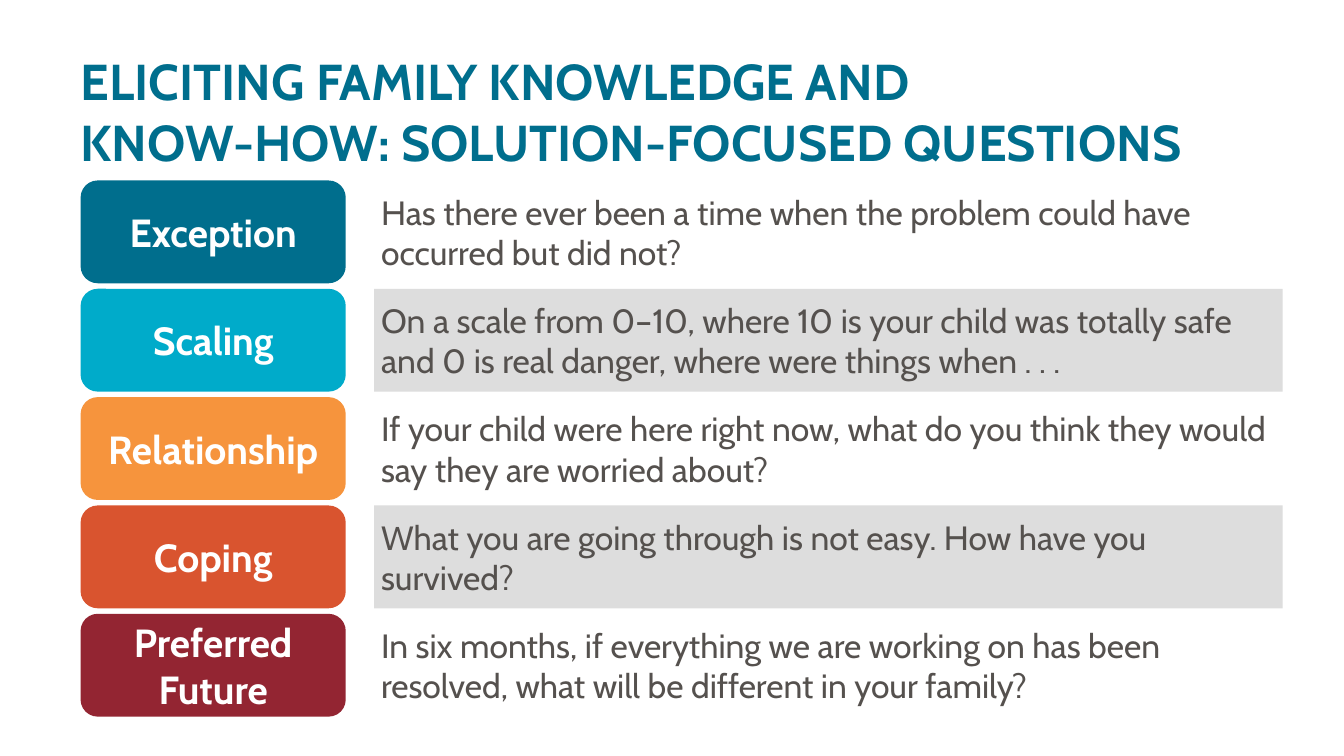
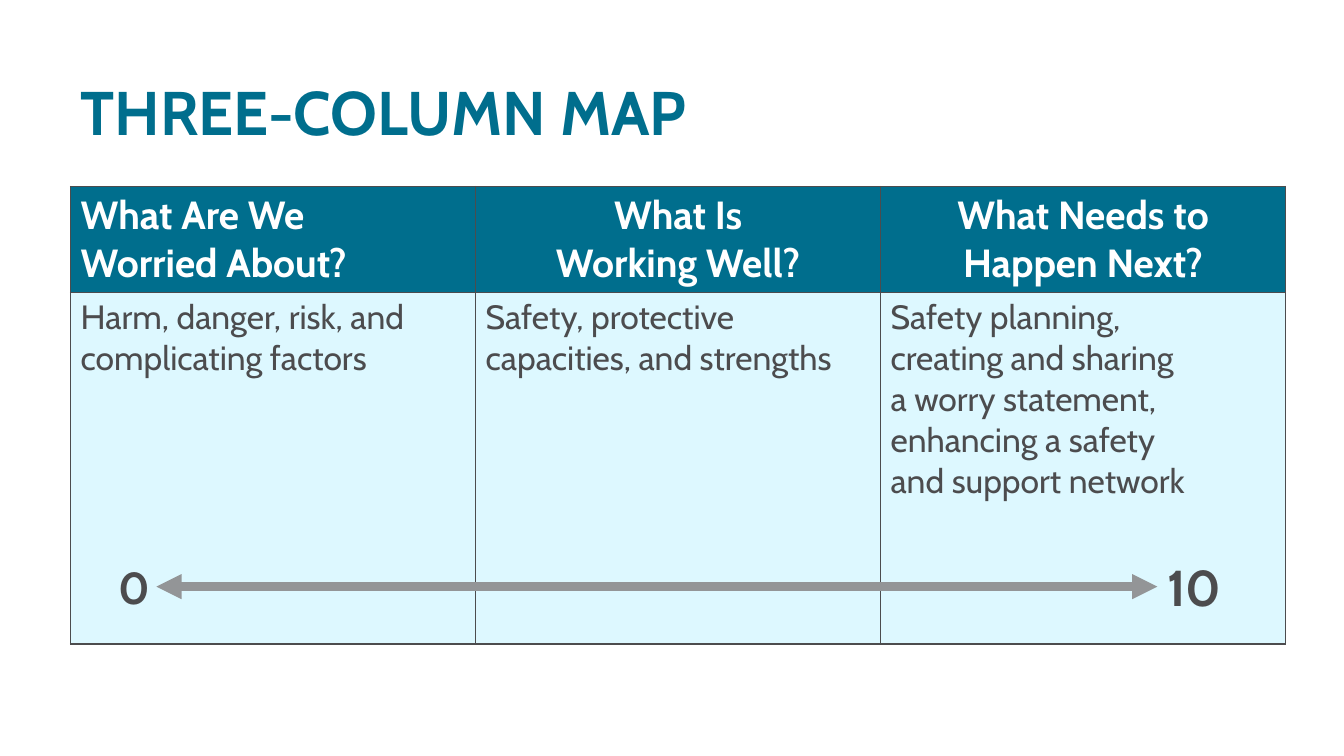
from dataclasses import dataclass

from lxml import etree
from pptx import Presentation
from pptx.dml.color import RGBColor
from pptx.enum.shapes import MSO_CONNECTOR, MSO_SHAPE
from pptx.enum.text import MSO_ANCHOR, PP_ALIGN
from pptx.oxml.ns import qn
from pptx.util import Inches, Pt

LEFT, CENTER = PP_ALIGN.LEFT, PP_ALIGN.CENTER
TOP, MIDDLE = MSO_ANCHOR.TOP, MSO_ANCHOR.MIDDLE
RECT, ROUND = MSO_SHAPE.RECTANGLE, MSO_SHAPE.ROUNDED_RECTANGLE
STRAIGHT = MSO_CONNECTOR.STRAIGHT
SIDE_LEFT, SIDE_RIGHT = 1, 3


@dataclass(frozen=True)
class Theme:
    font: str = "Cabin"
    teal: str = "006E8D"
    cyan: str = "00ABCA"
    orange: str = "F6943D"
    rust: str = "D9542F"
    wine: str = "932532"
    white: str = "FFFFFF"
    band: str = "DDDDDD"
    pale: str = "DDF8FF"
    ink: str = "4C4C4E"
    body: str = "55514E"
    arrow: str = "939597"
    title: int = 44
    long: int = 36
    high: int = 36
    low: int = 32
    label: int = 28
    text: int = 24


class Deck:
    def __init__(self, theme):
        self.theme = theme
        self.file = Presentation()
        self.file.slide_width = Inches(13.33)
        self.file.slide_height = Inches(7.5)
        self.slide = None

    def x(self, share):
        return round(self.file.slide_width * share / 100)

    def y(self, share):
        return round(self.file.slide_height * share / 100)

    def area(self, left, top, width, height):
        return self.x(left), self.y(top), self.x(width), self.y(height)

    def style(self, frame, text, size, color, bold=False, align=LEFT):
        para = frame.paragraphs[0]
        para.text = text
        para.alignment = align
        for run in para.runs:
            run.font.name = self.theme.font
            run.font.size = Pt(size)
            run.font.bold = bold
            run.font.color.rgb = RGBColor.from_string(color)

    def page(self, title, size):
        self.slide = self.file.slides.add_slide(self.file.slide_layouts[6])
        self.label((5.25, 5.33, 90.4, 18.67), title, size, self.theme.teal, MIDDLE)

    def label(self, place, text, size, color, anchor=TOP):
        box = self.slide.shapes.add_textbox(*self.area(*place))
        box.text_frame.word_wrap = True
        box.text_frame.vertical_anchor = anchor
        self.style(box.text_frame, text, size, color, True)
        return box

    def panel(self, kind, place, fill, pad, text, size, color, bold=False, align=LEFT):
        shape = self.slide.shapes.add_shape(kind, *self.area(*place))
        shape.shadow.inherit = False
        shape.fill.solid()
        shape.fill.fore_color.rgb = RGBColor.from_string(fill)
        shape.line.fill.background()
        frame = shape.text_frame
        frame.word_wrap = True
        frame.vertical_anchor = MIDDLE
        frame.margin_left = frame.margin_right = Inches(pad)
        self.style(frame, text, size, color, bold, align)

    def table(self, place, rows, heights):
        look = self.theme
        frame = self.slide.shapes.add_table(len(rows), len(rows[0]), *self.area(*place))
        grid = frame.table
        for row, height in zip(grid.rows, heights):
            row.height = self.y(height)
        for r, row in enumerate(rows):
            for c, text in enumerate(row):
                cell = grid.cell(r, c)
                self.border(cell)
                cell.fill.solid()
                fill = look.pale if r else look.teal
                cell.fill.fore_color.rgb = RGBColor.from_string(fill)
                if r:
                    cell.vertical_anchor = TOP
                    self.style(cell.text_frame, text, look.text, look.ink)
                else:
                    cell.vertical_anchor = MIDDLE
                    align = CENTER if c else LEFT
                    self.style(cell.text_frame, text, look.label, look.white, True, align)

    def border(self, cell):
        props = cell._tc.get_or_add_tcPr()
        for side in ("lnL", "lnR", "lnT", "lnB"):
            line = etree.SubElement(props, qn(f"a:{side}"), w=str(Pt(1)))
            fill = etree.SubElement(line, qn("a:solidFill"))
            etree.SubElement(fill, qn("a:srgbClr"), val=self.theme.ink)

    def arrow(self, start, end):
        link = self.slide.shapes.add_connector(STRAIGHT, 0, 0, 0, 0)
        link.begin_connect(start, SIDE_RIGHT)
        link.end_connect(end, SIDE_LEFT)
        link.line.width = Pt(6)
        link.line.color.rgb = RGBColor.from_string(self.theme.arrow)
        props = link._element.spPr
        line = props.find(qn("a:ln"))
        for tip in ("headEnd", "tailEnd"):
            etree.SubElement(line, qn(f"a:{tip}"), type="triangle")
        etree.SubElement(props, qn("a:effectLst"))


def questions(deck):
    look = deck.theme
    deck.page("ELICITING FAMILY KNOWLEDGE AND\nKNOW-HOW: SOLUTION-FOCUSED QUESTIONS", look.long)
    items = [
        ("Exception", look.teal,
         "Has there ever been a time when the problem could have occurred but did not?"),
        ("Scaling", look.cyan,
         "On a scale from 0–10, where 10 is your child was totally safe "
         "and 0 is real danger, where were things when . . ."),
        ("Relationship", look.orange,
         "If your child were here right now, what do you think they would "
         "say they are worried about?"),
        ("Coping", look.rust,
         "What you are going through is not easy. How have you survived?"),
        ("Preferred Future", look.wine,
         "In six months, if everything we are working on has been "
         "resolved, what will be different in your family?"),
    ]
    top, step, height = 23.87, 14.33, 13.6
    for i, (name, color, ask) in enumerate(items):
        y = top + i * step
        band = look.band if i % 2 else look.white
        deck.panel(RECT, (27.83, y, 67.6, height), band, 0.07, ask, look.text, look.body)
        deck.panel(ROUND, (6, y, 19.73, height), color, 0.05, name,
                   look.label, look.white, True, CENTER)


def columns(deck):
    look = deck.theme
    deck.page("THREE-COLUMN MAP", look.title)
    heads = ["What Are We\nWorried About?", "What Is\nWorking Well?",
             "What Needs to Happen Next?"]
    notes = ["Harm, danger, risk, and complicating factors",
             "Safety, protective capacities, and strengths",
             "Safety planning,\ncreating and sharing\na worry statement, "
             "enhancing a safety\nand support network"]
    deck.table((5.25, 24.67, 90.4, 60.53), [heads, notes], (14, 46.53))
    low = deck.label((8.1, 73.33, 3.53, 8.54), "0", look.low, look.ink)
    high = deck.label((86.12, 72.93, 6.68, 9.34), "10", look.high, look.ink)
    deck.arrow(low, high)


def main():
    deck = Deck(Theme())
    questions(deck)
    columns(deck)
    deck.file.save("out.pptx")


if __name__ == "__main__":
    main()
